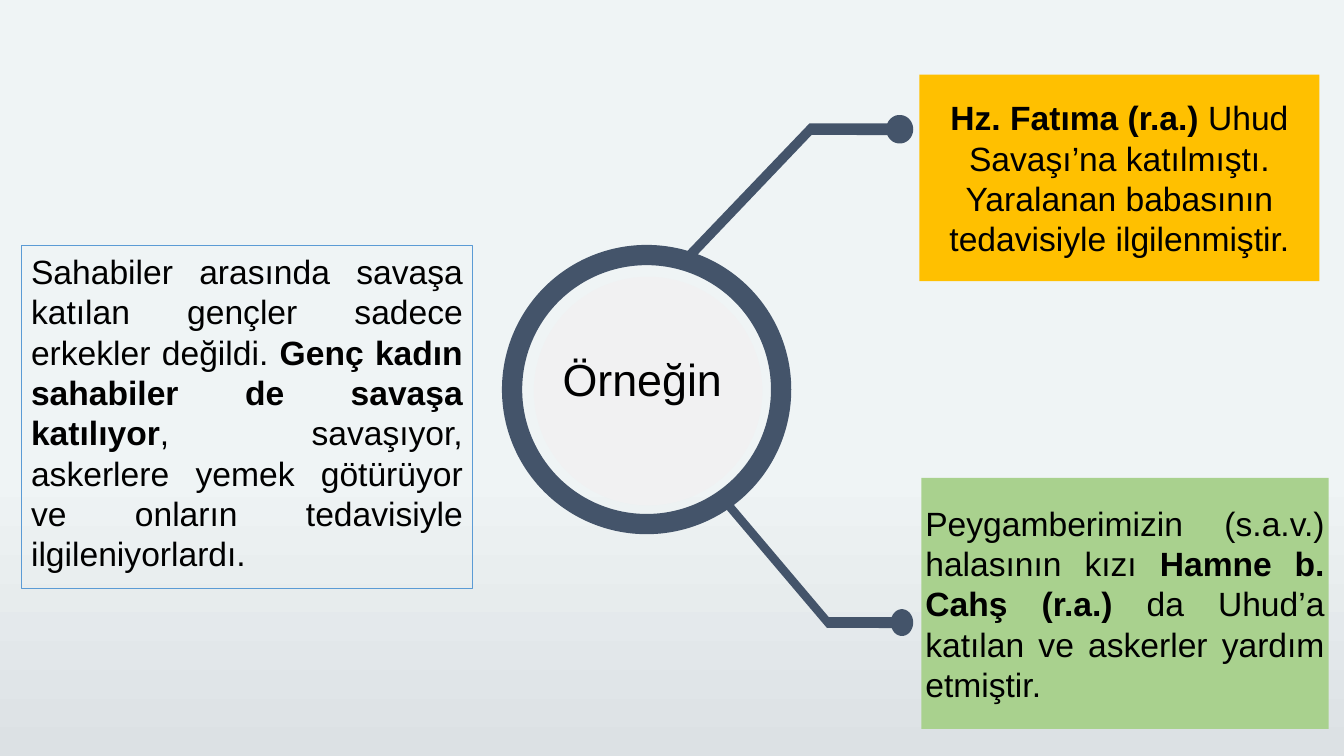
from dataclasses import dataclass
from math import cos, radians, sin

from pptx import Presentation
from pptx import util as u
from pptx.dml.color import RGBColor
from pptx.enum import shapes, text


@dataclass(frozen=True)
class Theme:
    font: str = "Arial"
    body: int = 24
    head: int = 32
    ink: str = "000000"
    slate: str = "44546A"
    disc: str = "F1F1F2"
    amber: str = "FFC000"
    green: str = "A9D18E"
    edge: str = "5B9BD5"
    sky: str = "EFF4F5"
    mist: str = "DCE1E4"


T = Theme()
COLS, ROWS = 133.33, 75  # square grid cells, ten to the inch
PRESET = shapes.MSO_SHAPE
ALIGN, ANCHOR, FIT = text.PP_ALIGN, text.MSO_ANCHOR, text.MSO_AUTO_SIZE


def cells(*vals):
    return [u.Inches(v / 10) for v in vals]


def rgb(code):
    return RGBColor.from_string(code)


def paint(shape, fill=None, line=None):
    shape.shadow.inherit = False
    if fill:
        shape.fill.solid()
        shape.fill.fore_color.rgb = rgb(fill)
    else:
        shape.fill.background()
    if line:
        shape.line.color.rgb = rgb(line)
        shape.line.width = u.Pt(0.75)
    else:
        shape.line.fill.background()
    return shape


def write(shape, runs, size=T.body, align=ALIGN.JUSTIFY, anchor=ANCHOR.TOP,
          pad=(1, 0.5), fit=FIT.NONE):
    """Fill a shape with (words, bold) runs; pad is the side and top inset in cells."""
    frame = shape.text_frame
    frame.word_wrap = True
    frame.auto_size = fit
    frame.vertical_anchor = anchor
    side, top = cells(*pad)
    frame.margin_left = frame.margin_right = side
    frame.margin_top = frame.margin_bottom = top
    para = frame.paragraphs[0]
    para.alignment = align
    for words, bold in runs:
        run = para.add_run()
        run.text = words
        run.font.name, run.font.size = T.font, u.Pt(size)
        run.font.bold = bold
        run.font.color.rgb = rgb(T.ink)


def backdrop(slide):
    fill = slide.background.fill
    fill.gradient()
    fill.gradient_angle = 270
    for stop, pos, code in zip(fill.gradient_stops, (0.62, 1), (T.sky, T.mist)):
        stop.position = pos
        stop.color.rgb = rgb(code)


def panel(slide, box, runs, fill=None, line=None, **form):
    shape = slide.shapes.add_shape(PRESET.RECTANGLE, *cells(*box))
    write(paint(shape, fill, line), runs, **form)


def arm(slide, box, dot, bar):
    """Draw a bent bar with a round end; dot (x, y, rx, ry) and bar points are shares of box."""
    left, top, wide, high = box
    x, y, rx, ry = dot
    turns = [radians(a) for a in range(156, -157, -12)]
    arc = [(x + rx * cos(a), y + ry * sin(a)) for a in turns]
    points = [cells(left + wide * px, top + high * py) for px, py in arc + bar]
    path = slide.shapes.build_freeform(*points[0])
    path.add_line_segments(points[1:], close=True)
    paint(path.convert_to_shape(), T.slate)


def hub(slide, box, label):
    left, top, size = box
    band = 0.07 * size
    ring = slide.shapes.add_shape(PRESET.DONUT, *cells(left, top, size, size))
    ring.adjustments[0] = band / size
    paint(ring, T.slate)
    inset, width = 0.11 * size, 0.79 * size
    disc = slide.shapes.add_shape(
        PRESET.OVAL, *cells(left + inset, top + inset, width, width))
    paint(disc, T.disc)

    title = slide.shapes.title
    title.left, title.top, title.width, title.height = cells(
        left + 0.09 * size, top + 0.35 * size, width, 6.4)
    write(title, [(label, False)], size=T.head, align=ALIGN.CENTER,
          anchor=ANCHOR.BOTTOM, pad=(0, 0.5), fit=FIT.SHAPE_TO_FIT_TEXT)
    title.element.getparent().append(title.element)  # bring to front


def build():
    deck = Presentation()
    deck.slide_width, deck.slide_height = cells(COLS, ROWS)
    slide = deck.slides.add_slide(deck.slide_layouts.get_by_name("Title Only"))
    backdrop(slide)

    panel(slide, (2.1, 24.4, 44.8, 34), [
        ("Sahabiler arasında savaşa katılan gençler sadece erkekler değildi. ", False),
        ("Genç kadın sahabiler de savaşa katılıyor", True),
        (", savaşıyor, askerlere yemek götürüyor ve onların tedavisiyle "
         "ilgileniyorlardı.", False),
    ], line=T.edge, fit=FIT.SHAPE_TO_FIT_TEXT)

    tight = dict(anchor=ANCHOR.MIDDLE, pad=(0.4, 0.4))
    panel(slide, (91.4, 47.4, 40.4, 24.9), [
        ("Peygamberimizin (s.a.v.) halasının kızı ", False),
        ("Hamne b. Cahş (r.a.) ", True),
        ("da Uhud’a katılan ve askerler yardım etmiştir.", False),
    ], fill=T.green, **tight)

    arm(slide, (68.2, 11.4, 22.4, 14.2), (0.94, 0.1, 0.06, 0.1),
        [(0.54, 0.06), (0, 0.95), (0.03, 1), (0.55, 0.14)])
    arm(slide, (72, 49.8, 18.6, 13.3), (0.94, 0.9, 0.06, 0.1),
        [(0.55, 0.86), (0.03, 0), (0, 0.05), (0.54, 0.94)])
    hub(slide, (49.8, 24.3, 28.7), "Örneğin")

    panel(slide, (91.2, 7.4, 39.7, 20.5), [
        ("Hz. Fatıma (r.a.) ", True),
        ("Uhud Savaşı’na katılmıştı. Yaralanan babasının tedavisiyle "
         "ilgilenmiştir.", False),
    ], fill=T.amber, align=ALIGN.CENTER, **tight)
    deck.save("out.pptx")


if __name__ == "__main__":
    build()
